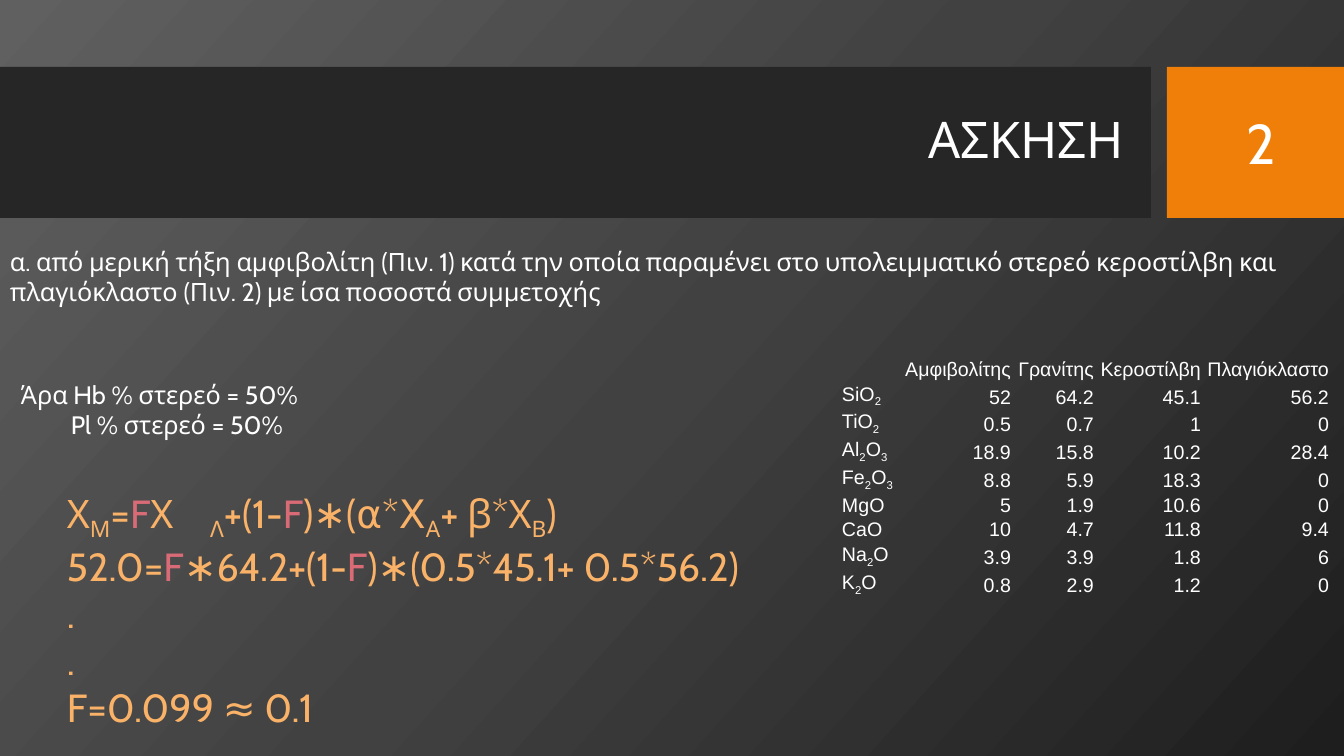
"""Build the exercise slide: partial melting of amphibolite, with its mass balance and oxide table."""
from copy import deepcopy

from lxml import etree
from pptx import Presentation
from pptx import util as u
from pptx.dml.color import RGBColor
from pptx.enum import shapes, text
from pptx.oxml.ns import qn

WHITE = RGBColor(0xFF, 0xFF, 0xFF)
BAND = RGBColor(0x26, 0x26, 0x26)
ORANGE = RGBColor(0xF0, 0x7F, 0x09)
PEACH = RGBColor(0xF9, 0xB2, 0x68)
PINK = RGBColor(0xD9, 0x6B, 0x77)
BACKGROUND = [
    (0, RGBColor(0x60, 0x60, 0x60)),
    (0.5, RGBColor(0x41, 0x41, 0x41)),
    (1, RGBColor(0x1E, 0x1E, 0x1E)),
]
NO_STYLE = "{2D5ABB26-0587-4C30-8999-92F81FD0307C}"

TITLE = ["ΑΣΚΗΣΗ"]
NUMBER = ["2"]
QUESTION = [
    "α. από μερική τήξη αμφιβολίτη (Πιν. 1) κατά την οποία παραμένει στο υπολειμματικό "
    "στερεό κεροστίλβη και πλαγιόκλαστο (Πιν. 2) με ίσα ποσοστά συμμετοχής"
]
SOLIDS = ["Άρα Hb % στερεό = 50%", "\tPl % στερεό = 50%"]
BALANCE = [
    "Χ|_Μ|=|~F|∗Χ|_Λ|+(1-|~F|)∗(α*Χ|_Α|+ β*Χ|_Β|)",
    "52.0=|~F|∗64.2+(1-|~F|)∗(0.5*45.1+ 0.5*56.2)",
    ".",
    ".",
    "F=0.099 ≈ 0.1",
]
OXIDES = [
    ("", "Αμφιβολίτης", "Γρανίτης", "Κεροστίλβη", "Πλαγιόκλαστο"),
    ("SiO|_2", "52", "64.2", "45.1", "56.2"),
    ("TiO|_2", "0.5", "0.7", "1", "0"),
    ("Al|_2|O|_3", "18.9", "15.8", "10.2", "28.4"),
    ("Fe|_2|O|_3", "8.8", "5.9", "18.3", "0"),
    ("MgO", "5", "1.9", "10.6", "0"),
    ("CaO", "10", "4.7", "11.8", "9.4"),
    ("Na|_2|O", "3.9", "3.9", "1.8", "6"),
    ("K|_2|O", "0.8", "2.9", "1.2", "0"),
]
COLUMN_WIDTHS = [58, 113, 83, 107, 128]
ROW_HEIGHT = 24
TAB_STOP = 50


def px(length):
    """Turn px into EMU."""
    return u.Emu(round(length * 914400 / 100.8))


def write(paragraph, marked, size, color=WHITE, font="Cabin", align=text.PP_ALIGN.LEFT):
    """Write runs parted by |, where _ marks a subscript and ~ the unknown."""
    paragraph.alignment = align
    if marked.startswith("\t"):
        tabs = etree.SubElement(paragraph._p.get_or_add_pPr(), qn("a:tabLst"))
        etree.SubElement(tabs, qn("a:tab"), pos=str(px(TAB_STOP)), algn="l")
    paragraph.font.size = u.Pt(size)
    paragraph.font.name = font
    paragraph.font.color.rgb = color
    for piece in filter(None, marked.split("|")):
        run = paragraph.add_run()
        run.text = piece.lstrip("_~")
        if piece.startswith("_"):
            run.font._element.set("baseline", "-25000")
        elif piece.startswith("~"):
            run.font.color.rgb = PINK


def add_text(slide, box, lines, size, wrap=True, grow=True, **style):
    """Add a text box with one paragraph a line."""
    frame = slide.shapes.add_textbox(*map(px, box)).text_frame
    frame.word_wrap = wrap
    if grow:
        frame.auto_size = text.MSO_AUTO_SIZE.SHAPE_TO_FIT_TEXT
    for index, line in enumerate(lines):
        paragraph = frame.add_paragraph() if index else frame.paragraphs[0]
        write(paragraph, line, size, **style)
    return frame


def add_block(slide, box, color):
    """Add a plain filled rectangle."""
    block = slide.shapes.add_shape(shapes.MSO_SHAPE.RECTANGLE, *map(px, box))
    block.shadow.inherit = False
    block.fill.solid()
    block.fill.fore_color.rgb = color
    block.line.fill.background()


def paint_background(slide):
    """Fill the background with the three-stop gradient."""
    fill = slide.background.fill
    fill.gradient()
    fill.gradient_angle = 318
    first = slide.background._cSld.find(".//" + qn("a:gs"))
    first.addnext(deepcopy(first))
    for stop, (position, color) in zip(fill.gradient_stops, BACKGROUND):
        stop.position = position
        stop.color.rgb = color


def add_oxides(slide, left, top):
    """Add the table of oxide contents."""
    size = (sum(COLUMN_WIDTHS), ROW_HEIGHT * len(OXIDES))
    frame = slide.shapes.add_table(
        len(OXIDES), len(COLUMN_WIDTHS), *map(px, (left, top, *size))
    )
    table = frame.table
    table.first_row = table.horz_banding = False
    table._tbl.tblPr.find(qn("a:tableStyleId")).text = NO_STYLE
    for column, width in zip(table.columns, COLUMN_WIDTHS):
        column.width = px(width)
    for row, values in zip(table.rows, OXIDES):
        row.height = px(ROW_HEIGHT)
        for index, (cell, value) in enumerate(zip(row.cells, values)):
            cell.fill.background()
            cell.vertical_anchor = text.MSO_ANCHOR.BOTTOM
            cell.margin_left = cell.margin_right = cell.margin_top = px(1)
            cell.margin_bottom = 0
            align = text.PP_ALIGN.RIGHT if index else text.PP_ALIGN.LEFT
            write(cell.text_frame.paragraphs[0], value, 14, font="Arial", align=align)


def main():
    """Lay out the slide and save it."""
    presentation = Presentation()
    presentation.slide_width, presentation.slide_height = px(1344), px(756)
    slide = presentation.slides.add_slide(presentation.slide_layouts[6])
    paint_background(slide)
    add_block(slide, (0, 67, 1151, 151), BAND)
    add_block(slide, (1167, 67, 177, 151), ORANGE)
    title = add_text(
        slide, (75, 83, 1059, 119), TITLE, 36, grow=False, align=text.PP_ALIGN.RIGHT
    )
    title.vertical_anchor = text.MSO_ANCHOR.MIDDLE
    title.paragraphs[0].line_spacing = 0.9
    add_text(slide, (1237, 104, 50, 78), NUMBER, 40, wrap=False)
    add_text(slide, (11, 374, 672, 72), SOLIDS, 18)
    add_text(
        slide, (57, 484, 716, 295), BALANCE, 28, wrap=False,
        color=PEACH, align=text.PP_ALIGN.JUSTIFY,
    )
    add_oxides(slide, 841, 356)
    add_text(slide, (0, 241, 1306, 72), QUESTION, 18)
    presentation.save("out.pptx")


if __name__ == "__main__":
    main()
